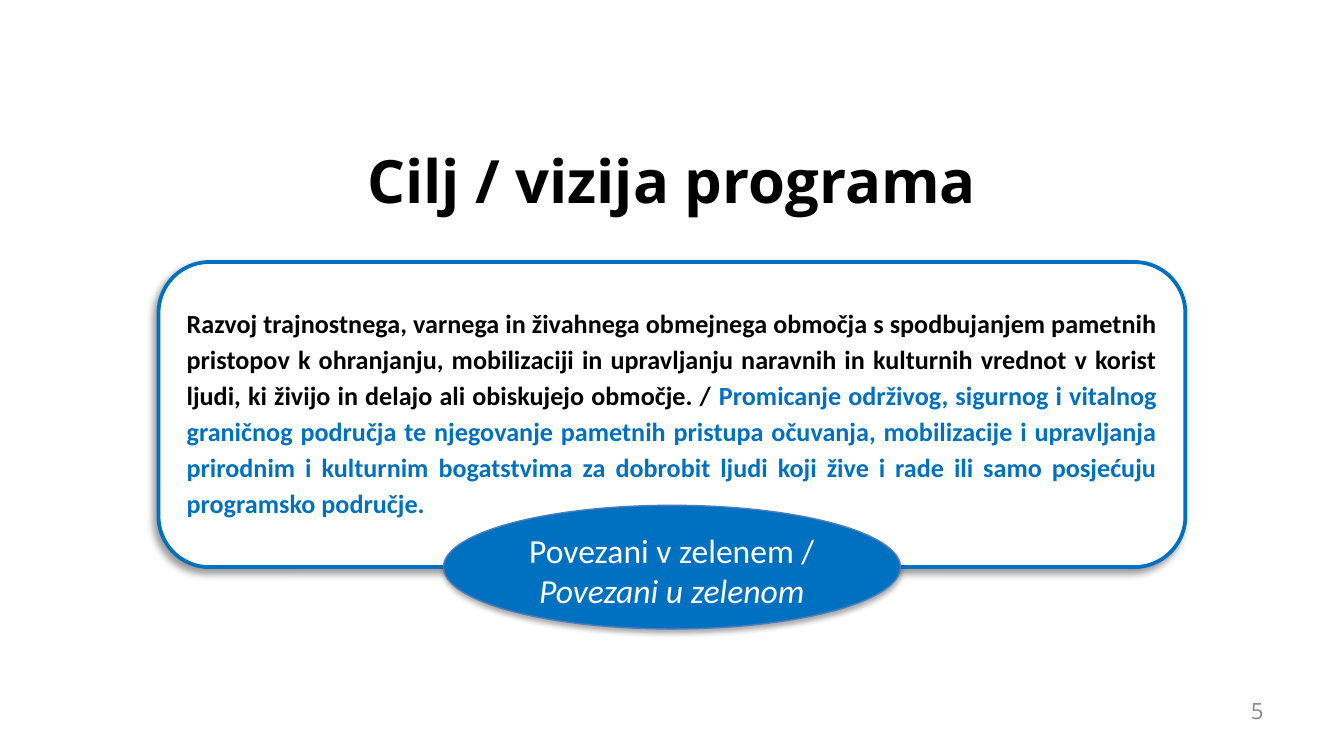
from lxml import etree
from pptx import Presentation
from pptx.dml.color import RGBColor
from pptx.enum.shapes import MSO_SHAPE
from pptx.enum.text import MSO_ANCHOR, PP_ALIGN
from pptx.oxml.ns import qn
from pptx.util import Inches, Pt

CENTER, RIGHT, JUSTIFY = PP_ALIGN.CENTER, PP_ALIGN.RIGHT, PP_ALIGN.JUSTIFY
TOP, MIDDLE = MSO_ANCHOR.TOP, MSO_ANCHOR.MIDDLE
ROUNDED, OVAL = MSO_SHAPE.ROUNDED_RECTANGLE, MSO_SHAPE.OVAL
BLACK, WHITE, BLUE, GREY = "000000", "FFFFFF", "0070C0", "898989"


def paint(target, colour):
    target.rgb = RGBColor.from_string(colour)


def write(box, anchor, align, font, size, spans, bold=False):
    frame = box.text_frame
    frame.word_wrap = True
    frame.vertical_anchor = anchor
    para = frame.paragraphs[0]
    para.alignment = align
    for text, colour, italic in spans:
        span = para.add_run()
        span.text = text
        span.font.name = font
        span.font.size = Pt(size)
        span.font.bold = bold
        span.font.italic = italic
        paint(span.font.color, colour)
    return para


deck = Presentation()
width = Inches(10)
height = width * 9 // 16
deck.slide_width, deck.slide_height = width, height
page = deck.slides.add_slide(deck.slide_layouts[5])

title = page.shapes.title
title.left, title.top = int(width * 0.05), Inches(1.02)
title.width, title.height = int(width * 0.9), Inches(0.94)
write(title, TOP, CENTER, "Open Sans", 32,
      [("Cilj / vizija programa", BLACK, False)], bold=True)

number = page.shapes.add_textbox(Inches(7.17), Inches(5.14), Inches(2.33), Inches(0.3))
write(number, MIDDLE, RIGHT, "Open Sans", 12, [("5", GREY, False)])

panels = [
    (ROUNDED, 1.95, 7.64, 2.27, WHITE, BLUE, 2, (40, 4, 3, 135)),
    (OVAL, 3.76, 3.4, 0.92, BLUE, "4B7EBC", 0.75, (35, 3.1, 1.8, 90)),
]
boxes = []
for kind, top, wide, high, fill, edge, weight, shade in panels:
    left = (width - Inches(wide)) // 2
    box = page.shapes.add_shape(kind, left, Inches(top), Inches(wide), Inches(high))
    box.fill.solid()
    paint(box.fill.fore_color, fill)
    paint(box.line.color, edge)
    box.line.width = Pt(weight)
    box.shadow.inherit = False
    opacity, blur, distance, angle = shade
    effects = box._element.spPr.find(qn("a:effectLst"))
    shadow = etree.SubElement(effects, qn("a:outerShdw"), blurRad=str(Pt(blur)),
                              dist=str(Pt(distance)), dir=str(angle * 60000),
                              rotWithShape="0")
    tint = etree.SubElement(shadow, qn("a:srgbClr"), val=BLACK)
    etree.SubElement(tint, qn("a:alpha"), val=str(opacity * 1000))
    boxes.append(box)
vision, slogan = boxes

para = write(vision, MIDDLE, JUSTIFY, "Calibri", 14, [
    ("Razvoj trajnostnega, varnega in živahnega obmejnega območja s spodbujanjem "
     "pametnih pristopov k ohranjanju, mobilizaciji in upravljanju naravnih in "
     "kulturnih vrednot v korist ljudi, ki živijo in delajo ali obiskujejo "
     "območje. / ", BLACK, False),
    ("Promicanje održivog, sigurnog i vitalnog graničnog područja te njegovanje "
     "pametnih pristupa očuvanja, mobilizacije i upravljanja prirodnim i kulturnim "
     "bogatstvima za dobrobit ljudi koji žive i rade ili samo posjećuju "
     "programsko područje.", BLUE, False),
], bold=True)
para.line_spacing = 1.15
vision.text_frame.margin_bottom = Inches(0.11)

write(slogan, TOP, CENTER, "Calibri", 18, [
    ("Povezani v zelenem / ", WHITE, False),
    ("Povezani u zelenom", WHITE, True),
])

deck.save("out.pptx")
